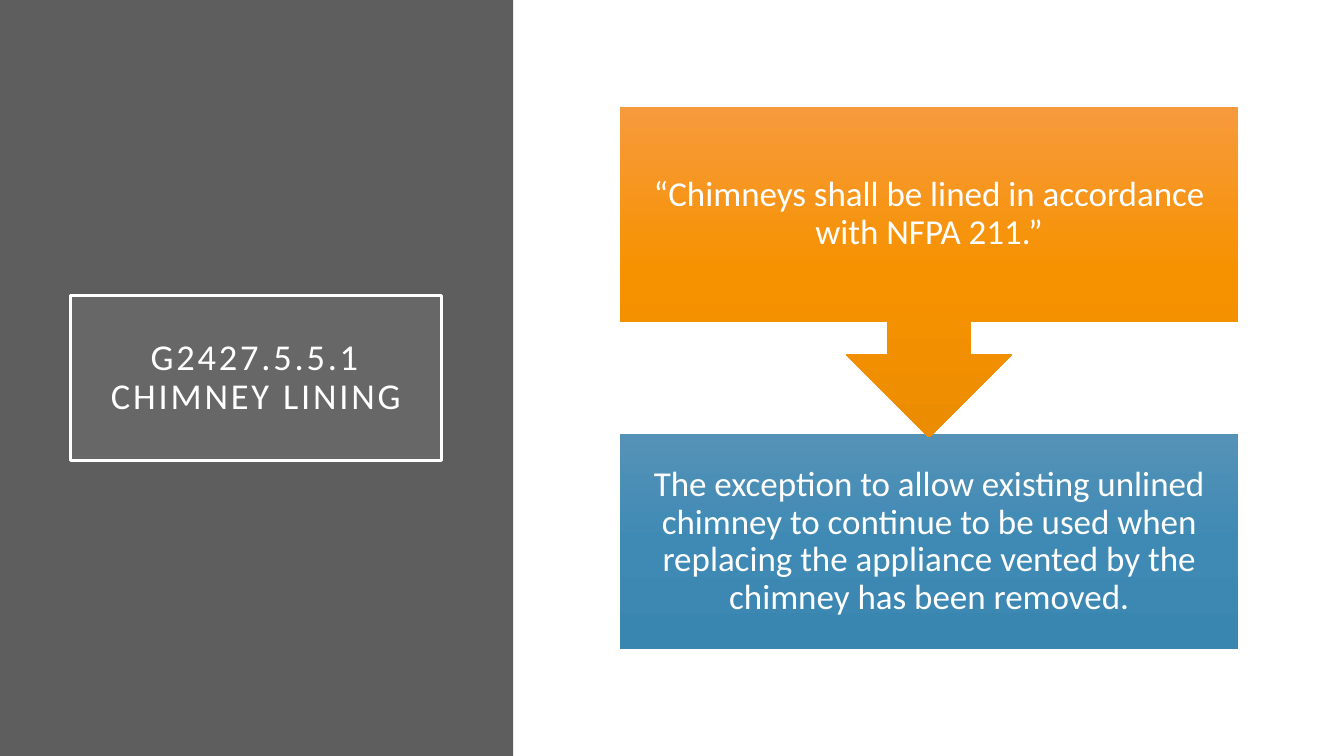
from copy import deepcopy
from dataclasses import dataclass

from lxml import etree
from pptx import Presentation
from pptx.dml.color import RGBColor
from pptx.enum.shapes import MSO_SHAPE as Preset
from pptx.enum.text import MSO_ANCHOR as Anchor, PP_ALIGN as Align
from pptx.oxml.ns import qn
from pptx.shapes.autoshape import Shape
from pptx.slide import Slide
from pptx.util import Inches, Pt


@dataclass(frozen=True)
class Theme:
    font: str = "Calibri"
    title_size: float = 26
    body_size: float = 25
    white: str = "FFFFFF"
    sidebar: str = "5E5E5E"
    title_tint: str = "9E9E9E"
    orange: tuple[str, ...] = ("F79A3D", "F69200", "EC8C00")
    blue: tuple[str, ...] = ("5592B7", "3F8AB5", "3986B1")


@dataclass(frozen=True)
class Step:
    text: str
    preset: Preset
    top: float
    height: float
    gradient: tuple[str, ...]


THEME = Theme()
SLIDE_WIDTH, SLIDE_HEIGHT = 13.33, 7.5
STEP_LEFT, STEP_WIDTH = 6.15, 6.13
STEPS = (
    Step("The exception to allow existing unlined chimney to continue to be used "
         "when replacing the appliance vented by the chimney has been removed.",
         Preset.RECTANGLE, 4.31, 2.13, THEME.blue),
    Step("“Chimneys shall be lined in accordance with NFPA 211.”",
         Preset.DOWN_ARROW_CALLOUT, 1.06, 3.28, THEME.orange),
)


def add_block(slide: Slide, preset: Preset, left: float, top: float,
              width: float, height: float) -> Shape:
    """Add a preset shape without line or shadow."""
    block = slide.shapes.add_shape(
        preset, Inches(left), Inches(top), Inches(width), Inches(height))
    block.shadow.inherit = False
    block.line.fill.background()
    return block


def fill_solid(block: Shape, color: str, opacity: int = 100) -> None:
    block.fill.solid()
    block.fill.fore_color.rgb = RGBColor.from_string(color)
    if opacity < 100:
        rgb = block._element.spPr.find(qn("a:solidFill")).find(qn("a:srgbClr"))
        etree.SubElement(rgb, qn("a:alpha")).set("val", str(opacity * 1000))


def fill_gradient(block: Shape, colors: tuple[str, ...]) -> None:
    """Fill from top to bottom with three evenly spaced colours."""
    block.fill.gradient()
    block.fill.gradient_angle = 270
    stop_list = block._element.spPr.find(qn("a:gradFill")).find(qn("a:gsLst"))
    stop_list.insert(1, deepcopy(stop_list[0]))
    for index, (stop, color) in enumerate(zip(block.fill.gradient_stops, colors)):
        stop.position = index / (len(colors) - 1)
        stop.color.rgb = RGBColor.from_string(color)


def write_text(block: Shape, text: str, *, size: float, inset: float,
               spacing: float = 0) -> None:
    """Write one centred white paragraph; spacing is between letters, in points."""
    frame = block.text_frame
    frame.word_wrap = True
    frame.vertical_anchor = Anchor.MIDDLE
    frame.margin_left = frame.margin_right = Inches(inset)
    frame.margin_top = frame.margin_bottom = Inches(inset)
    paragraph = frame.paragraphs[0]
    paragraph.alignment = Align.CENTER
    paragraph.line_spacing = 0.9
    run = paragraph.add_run()
    run.text = text
    run.font.name = THEME.font
    run.font.size = Pt(size)
    run.font.color.rgb = RGBColor.from_string(THEME.white)
    if spacing:
        run.font._element.set("spc", str(round(spacing * 100)))


def add_title(slide: Slide) -> None:
    title = add_block(slide, Preset.RECTANGLE, 0.7, 2.93, 3.68, 1.64)
    fill_solid(title, THEME.title_tint, opacity=15)
    title.line.color.rgb = RGBColor.from_string(THEME.white)
    title.line.width = Pt(2.5)
    write_text(title, "G2427.5.5.1 CHIMNEY LINING",
               size=THEME.title_size, inset=0.2, spacing=2)


def add_step(slide: Slide, step: Step) -> None:
    block = add_block(slide, step.preset, STEP_LEFT, step.top, STEP_WIDTH, step.height)
    fill_gradient(block, step.gradient)
    write_text(block, step.text, size=THEME.body_size, inset=0.19)


def main() -> None:
    deck = Presentation()
    deck.slide_width, deck.slide_height = Inches(SLIDE_WIDTH), Inches(SLIDE_HEIGHT)
    slide = deck.slides.add_slide(deck.slide_layouts[6])
    sidebar = add_block(slide, Preset.RECTANGLE, 0, 0, 5.09, SLIDE_HEIGHT)
    fill_solid(sidebar, THEME.sidebar)
    add_title(slide)
    for step in STEPS:
        add_step(slide, step)
    deck.save("out.pptx")


if __name__ == "__main__":
    main()
